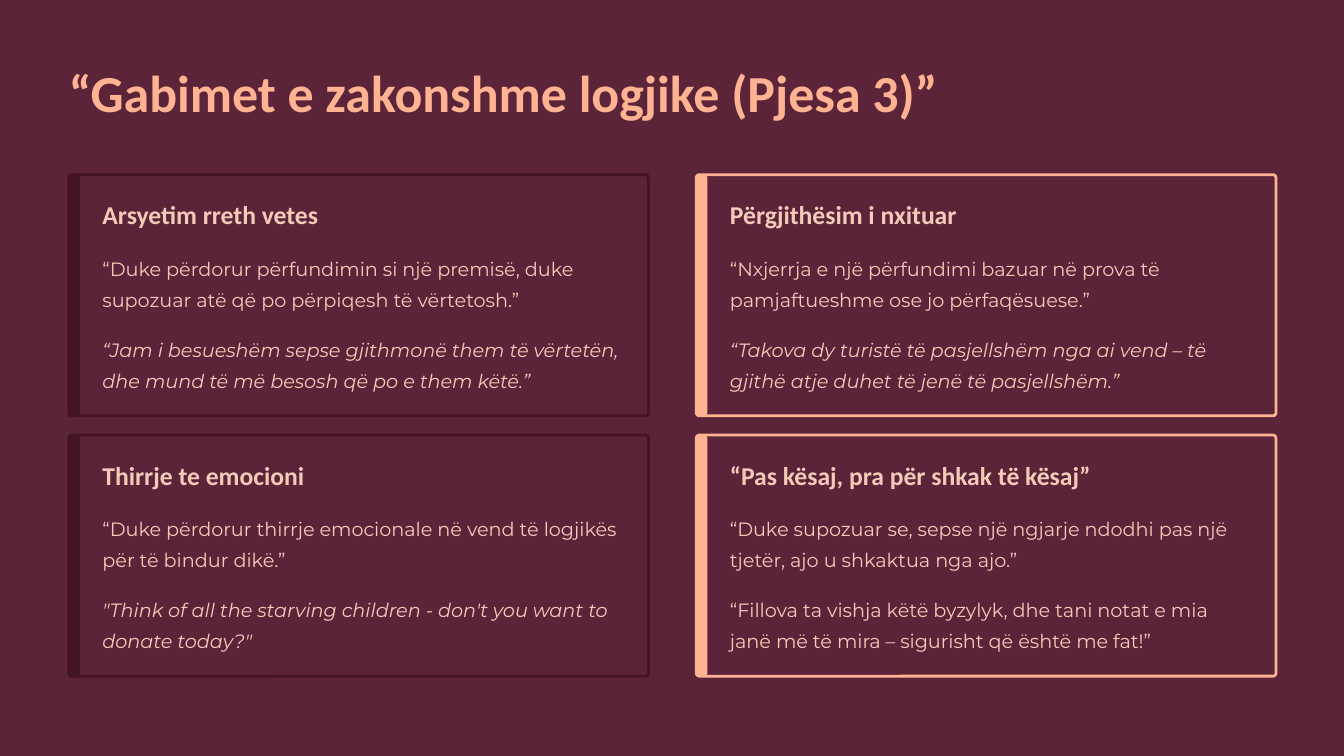
"""Build the slide on common logical fallacies, part 3, as a grid of four cards."""
import pptx
import pptx.dml.color
import pptx.enum.shapes
import pptx.util

Inches = pptx.util.Inches
Pt = pptx.util.Pt

TITLE = "“Gabimet e zakonshme logjike (Pjesa 3)”"
FALLACIES = [
    [
        ("Arsyetim rreth vetes",
         "“Duke përdorur përfundimin si një premisë, duke supozuar atë që po përpiqesh të vërtetosh.”",
         "“Jam i besueshëm sepse gjithmonë them të vërtetën, dhe mund të më besosh që po e them këtë.”",
         True),
        ("Thirrje te emocioni",
         "“Duke përdorur thirrje emocionale në vend të logjikës për të bindur dikë.”",
         "\"Think of all the starving children - don't you want to donate today?\"",
         True),
    ],
    [
        ("Përgjithësim i nxituar",
         "“Nxjerrja e një përfundimi bazuar në prova të pamjaftueshme ose jo përfaqësuese.”",
         "“Takova dy turistë të pasjellshëm nga ai vend – të gjithë atje duhet të jenë të pasjellshëm.”",
         True),
        ("“Pas kësaj, pra për shkak të kësaj”",
         "“Duke supozuar se, sepse një ngjarje ndodhi pas një tjetër, ajo u shkaktua nga ajo.”",
         "“Fillova ta vishja këtë byzylyk, dhe tani notat e mia janë më të mira – sigurisht që është me fat!”",
         False),
    ],
]
PLUM, PEACH, CREAM = "5C2438", "FFB393", "F4CAB8"
COLUMN_ACCENTS = ["421424", PEACH]
LEFT, TOP = 0.82, 2.08
CARD_WIDTH, CARD_HEIGHT = 6.9, 2.87
COLUMN_STEP, ROW_STEP = 7.47, 3.1
TITLE_WIDTH = COLUMN_STEP + CARD_WIDTH
STRIPE_WIDTH = 0.13
TEXT_INSET, TEXT_WIDTH = 0.4, 6.23

deck = pptx.Presentation()
deck.slide_width, deck.slide_height = Inches(16), Inches(9)
slide = deck.slides.add_slide(deck.slide_layouts[6])


def paint(color_format, color):
    color_format.rgb = pptx.dml.color.RGBColor.from_string(color)


def add_text(text, left, top, width, height, *, size, leading, color=CREAM,
             font="Montserrat", bold=False, italic=False):
    frame = slide.shapes.add_textbox(
        Inches(left), Inches(top), Inches(width), Inches(height)).text_frame
    frame.margin_left = frame.margin_right = frame.margin_top = frame.margin_bottom = 0
    frame.word_wrap = True
    paragraph = frame.paragraphs[0]
    paragraph.line_spacing = Pt(leading)
    run = paragraph.add_run()
    run.text = text
    run.font.name, run.font.size = font, Pt(size)
    run.font.bold, run.font.italic = bold, italic
    paint(run.font.color, color)


def add_panel(left, top, width, rounding, fill, outline=None):
    panel = slide.shapes.add_shape(
        pptx.enum.shapes.MSO_SHAPE.ROUNDED_RECTANGLE,
        Inches(left), Inches(top), Inches(width), Inches(CARD_HEIGHT))
    panel.adjustments[0] = rounding
    panel.shadow.inherit = False
    panel.fill.solid()
    paint(panel.fill.fore_color, fill)
    if outline:
        paint(panel.line.color, outline)
        panel.line.width = Pt(2.4)
    else:
        panel.line.fill.background()


def add_card(fallacy, left, top, accent):
    name, definition, example, example_italic = fallacy
    add_panel(left, top, CARD_WIDTH, 0.012, PLUM, accent)
    add_panel(left, top, STRIPE_WIDTH, 0.263, accent)
    text_left = left + TEXT_INSET
    add_text(name, text_left, top + 0.27, TEXT_WIDTH, 0.39, size=22, leading=28,
             font="Calibri", bold=True)
    add_text(definition, text_left, top + 0.89, TEXT_WIDTH, 0.75, size=16.5, leading=26.5)
    add_text(example, text_left, top + 1.85, TEXT_WIDTH, 0.75, size=16.5, leading=26.5,
             italic=example_italic)


slide.background.fill.solid()
paint(slide.background.fill.fore_color, PLUM)
add_text(TITLE, LEFT, 0.69, TITLE_WIDTH, 0.78, size=44.5, leading=56, color=PEACH,
         font="Calibri", bold=True)
for column, (fallacies, accent) in enumerate(zip(FALLACIES, COLUMN_ACCENTS)):
    for row, fallacy in enumerate(fallacies):
        add_card(fallacy, LEFT + column * COLUMN_STEP, TOP + row * ROW_STEP, accent)

deck.save("out.pptx")
